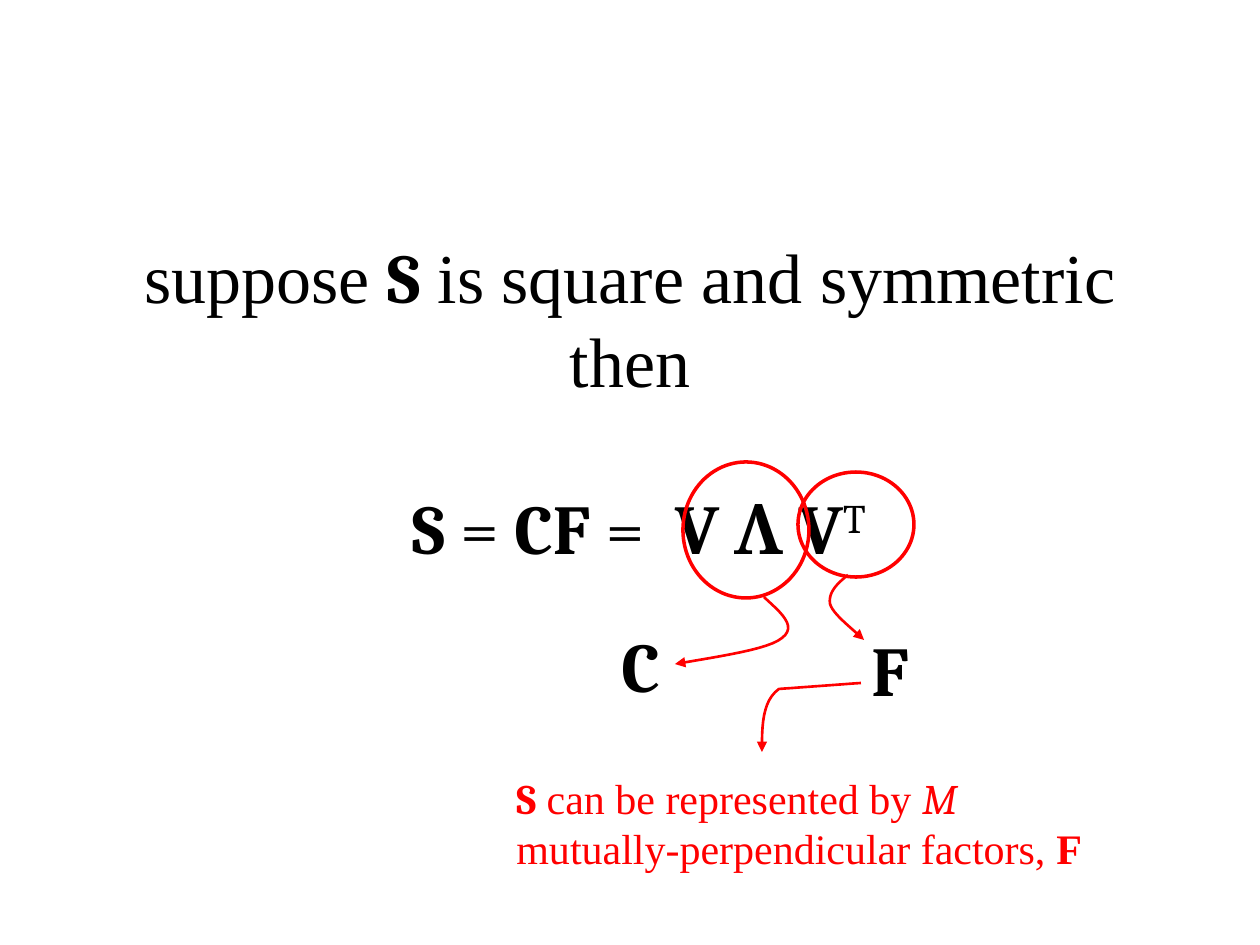
from lxml import etree
from pptx import Presentation
from pptx import util as u
from pptx.dml.color import RGBColor
from pptx.enum import shapes, text
from pptx.oxml.ns import qn

PX = 914400 / 126
RED, BLACK = "FF0000", "000000"
ROMAN, MATH = "Times New Roman", "Cambria"

deck = Presentation()
deck.slide_width, deck.slide_height = u.Inches(10), u.Inches(7.5)
slide = deck.slides.add_slide(deck.slide_layouts[6])


def write(box, size, color, paras, wrap=True):
    """Add a text box; each run is (words, font, style letters)."""
    frame = slide.shapes.add_textbox(*[round(n * PX) for n in box]).text_frame
    frame.word_wrap = wrap
    for i, runs in enumerate(paras):
        para = frame.paragraphs[0] if i == 0 else frame.add_paragraph()
        for words, face, style in runs:
            run = para.add_run()
            run.text = words
            font = run.font
            font.name, font.size = face, u.Pt(size)
            font.bold, font.italic = "b" in style, "i" in style
            font.color.rgb = RGBColor.from_string(color)
            if "^" in style:
                font._element.set("baseline", "30000")
    return frame


def trace(shape, width):
    """Give a shape a red outline with no fill or shadow."""
    shape.shadow.inherit = False
    shape.fill.background()
    shape.line.color.rgb = RGBColor.from_string(RED)
    shape.line.width = u.Pt(width)


# Statement and equation
title = write((0, 168, 1260, 466), 40, BLACK, [
    [("suppose ", ROMAN, ""), ("S", MATH, "b"),
     (" is square and symmetric", ROMAN, "")],
    [("then", ROMAN, "")],
    [(" ", ROMAN, ""), ("S ", MATH, "b"), ("= ", MATH, ""),
     ("CF", MATH, "b"), (" =  ", MATH, ""), ("V Λ V", MATH, "b"),
     ("T", MATH, "^")],
])
title.vertical_anchor = text.MSO_ANCHOR.MIDDLE
for para in title.paragraphs:
    para.alignment = text.PP_ALIGN.CENTER
title.paragraphs[2].space_before = u.Pt(47)

# Rings around the two factors
for ring in [(683, 462, 126, 136), (798, 472, 116, 105)]:
    oval = slide.shapes.add_shape(shapes.MSO_SHAPE.OVAL,
                                  *[round(n * PX) for n in ring])
    trace(oval, 2)

# Factor names
for name, left, top in [("C", 609, 616), ("F", 859, 620)]:
    write((left, top, 64, 97), 40, BLACK, [[(name, MATH, "b")]], wrap=False)

# Conclusion
write((504, 766, 630, 115), 24, RED, [[
    ("S", MATH, "b"), (" can be represented by ", ROMAN, ""),
    ("M", MATH, "i"), (" mutually-perpendicular factors, ", ROMAN, ""),
    ("F", ROMAN, "b"),
]])

# Curved arrows: chained cubic Béziers, each sharing an end with the next
STEPS = 12
curves = [
    [(764, 597), (780, 612), (798, 626), (782, 638),
     (769, 649), (722, 656), (675, 664)],
    [(848, 575), (838, 583), (828, 592), (830, 604),
     (833, 614), (849, 626), (864, 640)],
    [(861, 683), (861, 683), (779, 689), (779, 689),
     (762, 701), (762, 727), (762, 752)],
]
for knots in curves:
    dots = []
    for k in range(0, len(knots) - 1, 3):
        for step in range(1, STEPS + 1):
            t = step / STEPS
            mix = ((1 - t) ** 3, 3 * t * (1 - t) ** 2,
                   3 * t * t * (1 - t), t ** 3)
            dots.append([sum(m * p[axis] for m, p in zip(mix, knots[k:k + 4])) * PX
                         for axis in (0, 1)])
    pen = slide.shapes.build_freeform(*[round(n * PX) for n in knots[0]])
    pen.add_line_segments(dots, close=False)
    arrow = pen.convert_to_shape()
    trace(arrow, 1.5)
    etree.SubElement(arrow.line._get_or_add_ln(), qn("a:tailEnd"), type="triangle")

deck.save("out.pptx")
